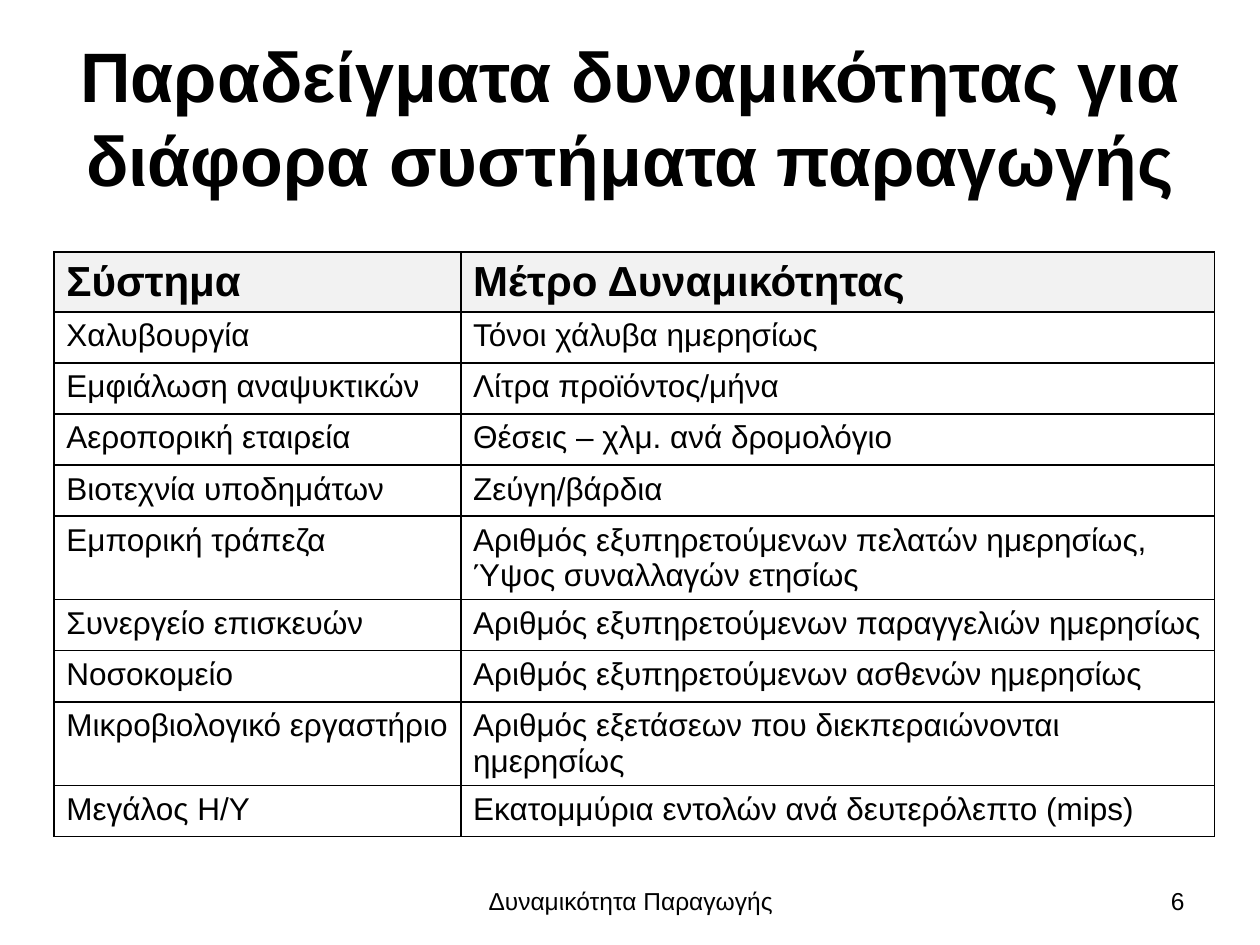
from lxml import etree
from pptx import Presentation
from pptx.dml.color import RGBColor
from pptx.enum.text import MSO_ANCHOR, PP_ALIGN
from pptx.oxml.ns import qn
from pptx.util import Cm, Pt

MIDDLE = MSO_ANCHOR.MIDDLE
TOP = MSO_ANCHOR.TOP
LEFT, CENTER, RIGHT = PP_ALIGN.LEFT, PP_ALIGN.CENTER, PP_ALIGN.RIGHT
BLACK = RGBColor(0x00, 0x00, 0x00)
HEADER_GREY = RGBColor(0xF2, 0xF2, 0xF2)
FONT = "Arial"
TITLE_ONLY = 5

TITLE = "Παραδείγματα δυναμικότητας για διάφορα συστήματα παραγωγής"
CAPACITY_MEASURES = [
    ("Σύστημα", "Μέτρο Δυναμικότητας"),
    ("Χαλυβουργία", "Τόνοι χάλυβα ημερησίως"),
    ("Εμφιάλωση αναψυκτικών", "Λίτρα προϊόντος/μήνα"),
    ("Αεροπορική εταιρεία", "Θέσεις – χλμ. ανά δρομολόγιο"),
    ("Βιοτεχνία υποδημάτων", "Ζεύγη/βάρδια"),
    ("Εμπορική τράπεζα",
     "Αριθμός εξυπηρετούμενων πελατών ημερησίως, Ύψος συναλλαγών ετησίως"),
    ("Συνεργείο επισκευών", "Αριθμός εξυπηρετούμενων παραγγελιών ημερησίως"),
    ("Νοσοκομείο", "Αριθμός εξυπηρετούμενων ασθενών ημερησίως"),
    ("Μικροβιολογικό εργαστήριο",
     "Αριθμός εξετάσεων που διεκπεραιώνονται ημερησίως"),
    ("Μεγάλος Η/Υ", "Εκατομμύρια εντολών ανά δευτερόλεπτο (mips)"),
]


def write(frame, text, size, align, bold=False):
    frame.text = text
    frame.word_wrap = True
    paragraph = frame.paragraphs[0]
    paragraph.alignment = align
    font = paragraph.runs[0].font
    font.name, font.size, font.bold = FONT, Pt(size), bold
    font.color.rgb = BLACK


def add_title(slide, left, top, width, height):
    title = slide.shapes.title
    title.left, title.top, title.width, title.height = left, top, width, height
    write(title.text_frame, TITLE, 40, CENTER, bold=True)
    title.text_frame.vertical_anchor = MIDDLE


def add_borders(cell):
    properties = cell._tc.get_or_add_tcPr()
    for index, side in enumerate(("a:lnL", "a:lnR", "a:lnT", "a:lnB")):
        border = etree.Element(qn(side), w=str(Pt(1)))
        fill = etree.SubElement(border, qn("a:solidFill"))
        etree.SubElement(fill, qn("a:srgbClr"), val=str(BLACK))
        properties.insert(index, border)


def add_capacity_table(slide, left, top, width, height):
    row_count = len(CAPACITY_MEASURES)
    table = slide.shapes.add_table(row_count, 2, left, top, width, height).table
    system_width = Cm(8.2)
    table.columns[0].width = system_width
    table.columns[1].width = width - system_width
    for row, measures in enumerate(CAPACITY_MEASURES):
        is_header = row == 0
        for column, text in enumerate(measures):
            cell = table.cell(row, column)
            write(cell.text_frame, text, 24 if is_header else 18, LEFT, is_header)
            cell.vertical_anchor = TOP
            cell.margin_left = cell.margin_right = Cm(0.25)
            cell.margin_top = cell.margin_bottom = Cm(0.13)
            if is_header:
                cell.fill.solid()
                cell.fill.fore_color.rgb = HEADER_GREY
            else:
                cell.fill.background()
            add_borders(cell)


def add_footer_text(slide, text, align, left, top, width, height):
    frame = slide.shapes.add_textbox(left, top, width, height).text_frame
    write(frame, text, 14, align)
    frame.vertical_anchor = MIDDLE


def main():
    presentation = Presentation()
    presentation.slide_width, presentation.slide_height = Cm(25.4), Cm(19.05)
    slide = presentation.slides.add_slide(presentation.slide_layouts[TITLE_ONLY])
    add_title(slide, Cm(1.27), Cm(0.76), Cm(22.86), Cm(3.18))
    add_capacity_table(slide, Cm(1.09), Cm(5.08), Cm(23.39), Cm(10.3))
    footer_top, footer_height = Cm(17.65), Cm(1.02)
    add_footer_text(slide, "Δυναμικότητα Παραγωγής", CENTER,
                    Cm(8.69), footer_top, Cm(8.05), footer_height)
    add_footer_text(slide, "6", RIGHT,
                    Cm(18.21), footer_top, Cm(5.92), footer_height)
    presentation.save("out.pptx")


if __name__ == "__main__":
    main()
